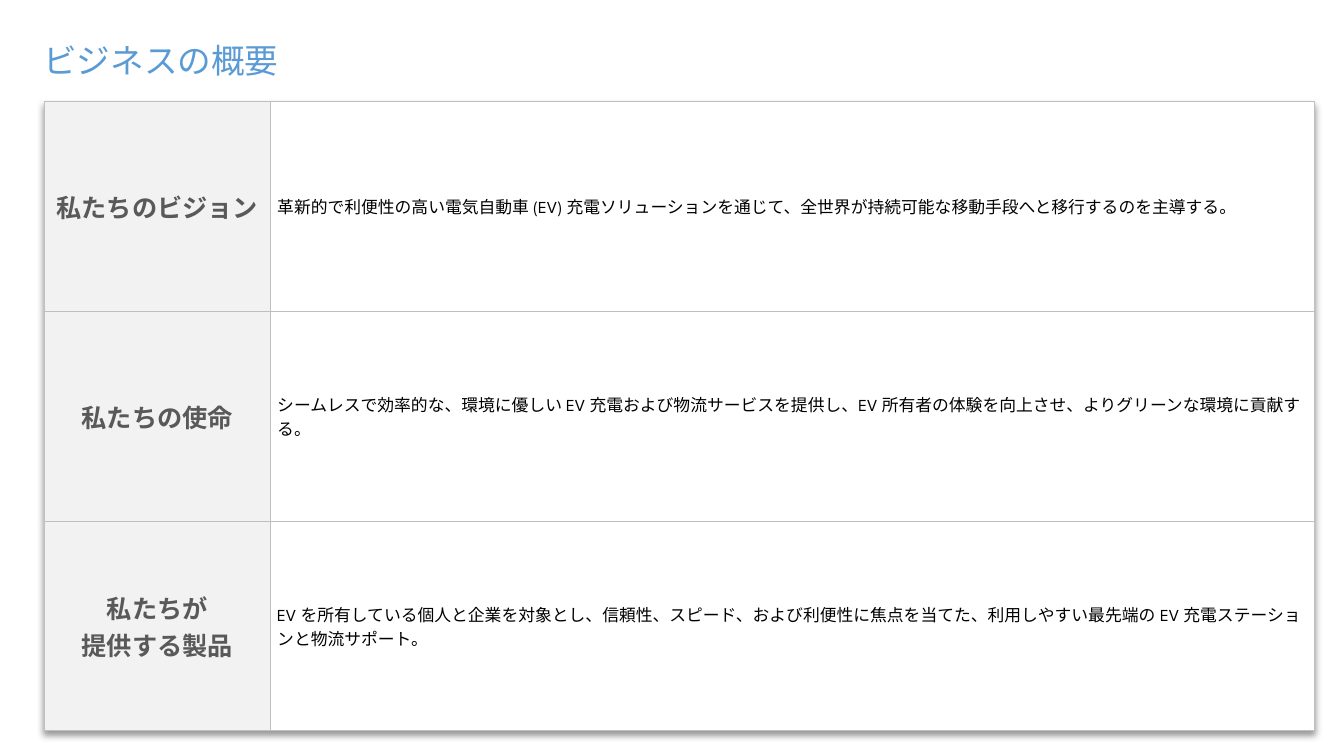
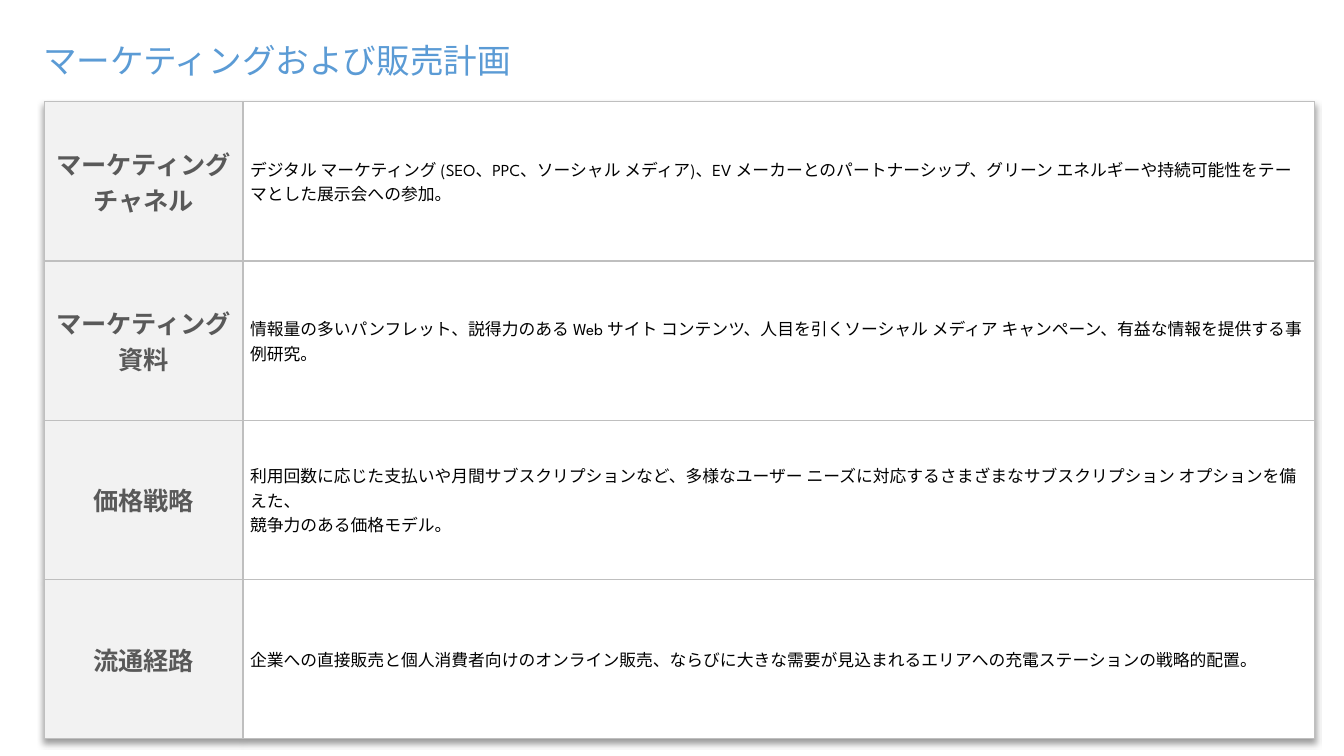
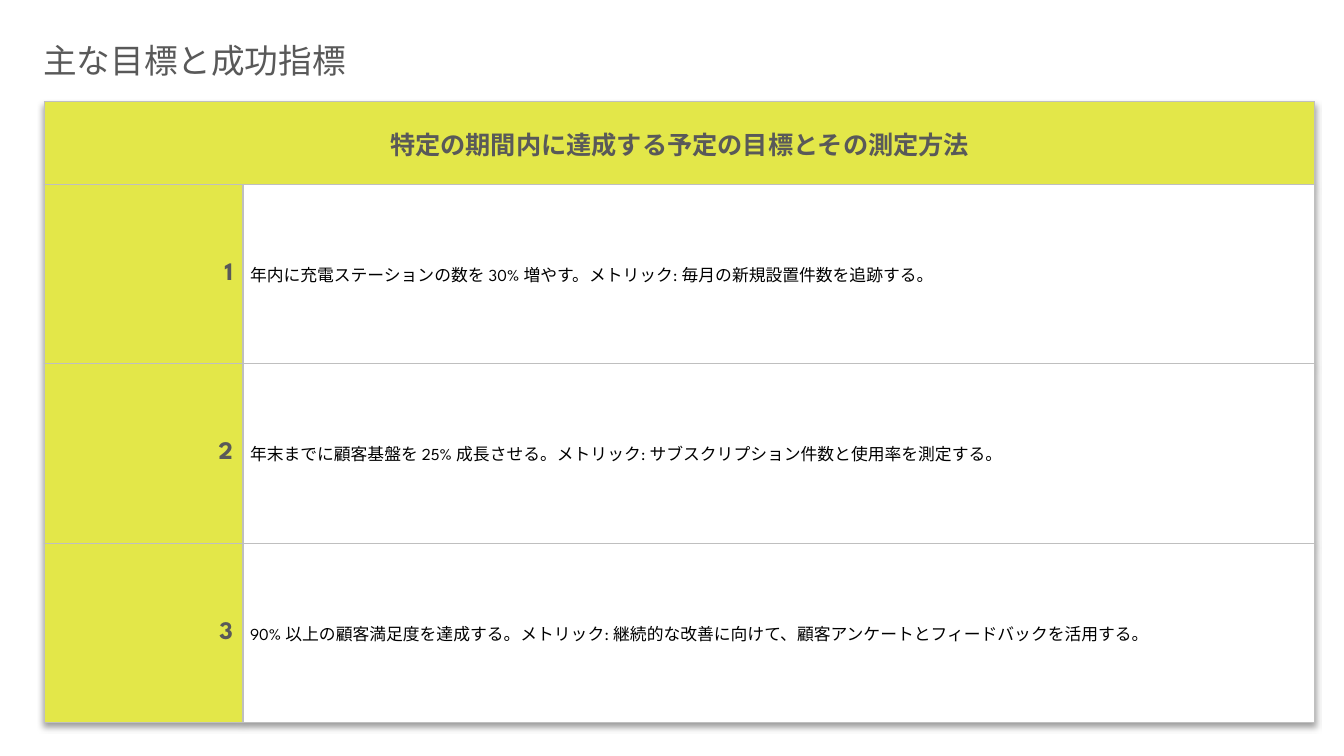
from lxml.etree import SubElement
from pptx import Presentation
from pptx.dml.color import RGBColor
from pptx.enum.lang import MSO_LANGUAGE_ID
from pptx.enum.text import MSO_ANCHOR, MSO_AUTO_SIZE, PP_ALIGN
from pptx.oxml import parse_xml
from pptx.oxml.ns import nsdecls, qn
from pptx.util import Inches, Pt

FONT = "League Spartan"
BLUE = RGBColor(0x5B, 0x9B, 0xD5)
DARK_GRAY = RGBColor(0x59, 0x59, 0x59)
BORDER_GRAY = RGBColor(0xBF, 0xBF, 0xBF)
LIGHT_GRAY = RGBColor(0xF2, 0xF2, 0xF2)
LIME = RGBColor(0xE3, 0xE7, 0x49)
BLACK = RGBColor(0, 0, 0)
WHITE = RGBColor(0xFF, 0xFF, 0xFF)

TITLE_BOX = [Inches(value) for value in (0.33, 0.35, 8.08, 0.5)]
TABLE_LEFT, TABLE_TOP, TABLE_WIDTH = 0.44, 1.01, 12.6

OVERVIEW = [
    ("私たちのビジョン",
     "革新的で利便性の高い電気自動車 (EV) 充電ソリューションを通じて、全世界が持続可能な移動手段へと移行するのを主導する。"),
    ("私たちの使命",
     "シームレスで効率的な、環境に優しい EV 充電および物流サービスを提供し、EV 所有者の体験を向上させ、よりグリーンな環境に貢献する。"),
    ("私たちが\n提供する製品",
     "EV を所有している個人と企業を対象とし、信頼性、スピード、および利便性に焦点を当てた、利用しやすい最先端の EV 充電ステーションと物流サポート。"),
]
MARKETING = [
    ("マーケティング チャネル",
     "デジタル マーケティング (SEO、PPC、ソーシャル メディア)、EV メーカーとのパートナーシップ、グリーン エネルギーや持続可能性をテーマとした展示会への参加。"),
    ("マーケティング資料",
     "情報量の多いパンフレット、説得力のある Web サイト コンテンツ、人目を引くソーシャル メディア キャンペーン、有益な情報を提供する事例研究。"),
    ("価格戦略",
     "利用回数に応じた支払いや月間サブスクリプションなど、多様なユーザー ニーズに対応するさまざまなサブスクリプション オプションを備えた、\n競争力のある価格モデル。"),
    ("流通経路",
     "企業への直接販売と個人消費者向けのオンライン販売、ならびに大きな需要が見込まれるエリアへの充電ステーションの戦略的配置。"),
]
GOALS_HEADING = "特定の期間内に達成する予定の目標とその測定方法"
GOALS = [
    ("1", "年内に充電ステーションの数を 30% 増やす。メトリック: 毎月の新規設置件数を追跡する。"),
    ("2", "年末までに顧客基盤を 25% 成長させる。メトリック: サブスクリプション件数と使用率を測定する。"),
    ("3", "90% 以上の顧客満足度を達成する。メトリック: 継続的な改善に向けて、顧客アンケートとフィードバックを活用する。"),
]


def write_text(text_frame, text, size, color, bold=False, align=PP_ALIGN.LEFT):
    paragraph = text_frame.paragraphs[0]
    paragraph.text = text
    paragraph.alignment = align
    for run in paragraph.runs:
        run.font.name = FONT
        run.font.size = Pt(size)
        run.font.bold = bold
        run.font.color.rgb = color
        run.font.language_id = MSO_LANGUAGE_ID.JAPANESE


def style_cell(cell, fill_color):
    """Draw the cell's four borders, then its fill, in schema order."""
    properties = cell._tc.get_or_add_tcPr()
    for side in ("a:lnL", "a:lnR", "a:lnT", "a:lnB"):
        line = SubElement(properties, qn(side), w=str(Pt(1)))
        solid = SubElement(line, qn("a:solidFill"))
        SubElement(solid, qn("a:srgbClr"), val=str(BORDER_GRAY))
    cell.fill.solid()
    cell.fill.fore_color.rgb = fill_color
    cell.vertical_anchor = MSO_ANCHOR.MIDDLE


def fill_label(cell, text, align):
    write_text(cell.text_frame, text, 18, DARK_GRAY, True, align)


def fill_description(cell, text):
    cell.margin_left = cell.margin_right = Inches(0.07)
    cell.margin_top = cell.margin_bottom = 0
    write_text(cell.text_frame, text, 12, BLACK)


def add_table_shadow(table):
    table._tbl.tblPr.insert(0, parse_xml(
        f'<a:effectLst {nsdecls("a")}>'
        '<a:outerShdw blurRad="50800" dist="38100" dir="5400000" algn="t" rotWithShape="0">'
        '<a:srgbClr val="000000"><a:alpha val="40000"/></a:srgbClr>'
        '</a:outerShdw></a:effectLst>'))


def add_title(slide, text, color):
    text_frame = slide.shapes.add_textbox(*TITLE_BOX).text_frame
    text_frame.word_wrap = True
    text_frame.auto_size = MSO_AUTO_SIZE.SHAPE_TO_FIT_TEXT
    write_text(text_frame, text, 24, color)


def add_label_table(slide, rows, label_width, row_height, label_fill,
                    label_align=PP_ALIGN.CENTER, heading=None, heading_height=0.82):
    """Place label and description rows, below a merged heading row if one is given."""
    heights = [row_height] * len(rows)
    if heading:
        heights.insert(0, heading_height)
    first_row = len(heights) - len(rows)
    table = slide.shapes.add_table(
        len(heights), 2, Inches(TABLE_LEFT), Inches(TABLE_TOP),
        Inches(TABLE_WIDTH), Inches(sum(heights))).table
    table.first_row = table.horz_banding = False
    add_table_shadow(table)
    for column, width in zip(table.columns, (label_width, TABLE_WIDTH - label_width)):
        column.width = Inches(width)
    for row, height in zip(table.rows, heights):
        row.height = Inches(height)

    if heading:
        for cell in table.rows[0].cells:
            style_cell(cell, label_fill)
        table.cell(0, 0).merge(table.cell(0, 1))
        fill_label(table.cell(0, 0), heading, PP_ALIGN.CENTER)
    for index, (label, description) in enumerate(rows, first_row):
        label_cell, description_cell = table.rows[index].cells
        style_cell(label_cell, label_fill)
        style_cell(description_cell, WHITE)
        fill_label(label_cell, label, label_align)
        fill_description(description_cell, description)


def add_table_slide(presentation, title, title_color, **table_options):
    slide = presentation.slides.add_slide(presentation.slide_layouts[6])
    add_title(slide, title, title_color)
    add_label_table(slide, **table_options)


def main():
    presentation = Presentation()
    presentation.slide_width = Inches(13.33)
    presentation.slide_height = Inches(7.5)
    add_table_slide(presentation, "ビジネスの概要", BLUE, rows=OVERVIEW,
                    label_width=2.24, row_height=2.08, label_fill=LIGHT_GRAY)
    add_table_slide(presentation, "マーケティングおよび販売計画", BLUE, rows=MARKETING,
                    label_width=1.97, row_height=1.58, label_fill=LIGHT_GRAY)
    add_table_slide(presentation, "主な目標と成功指標", DARK_GRAY, rows=GOALS,
                    label_width=1.97, row_height=1.78, label_fill=LIME,
                    label_align=PP_ALIGN.RIGHT, heading=GOALS_HEADING)
    presentation.save("out.pptx")


if __name__ == "__main__":
    main()
